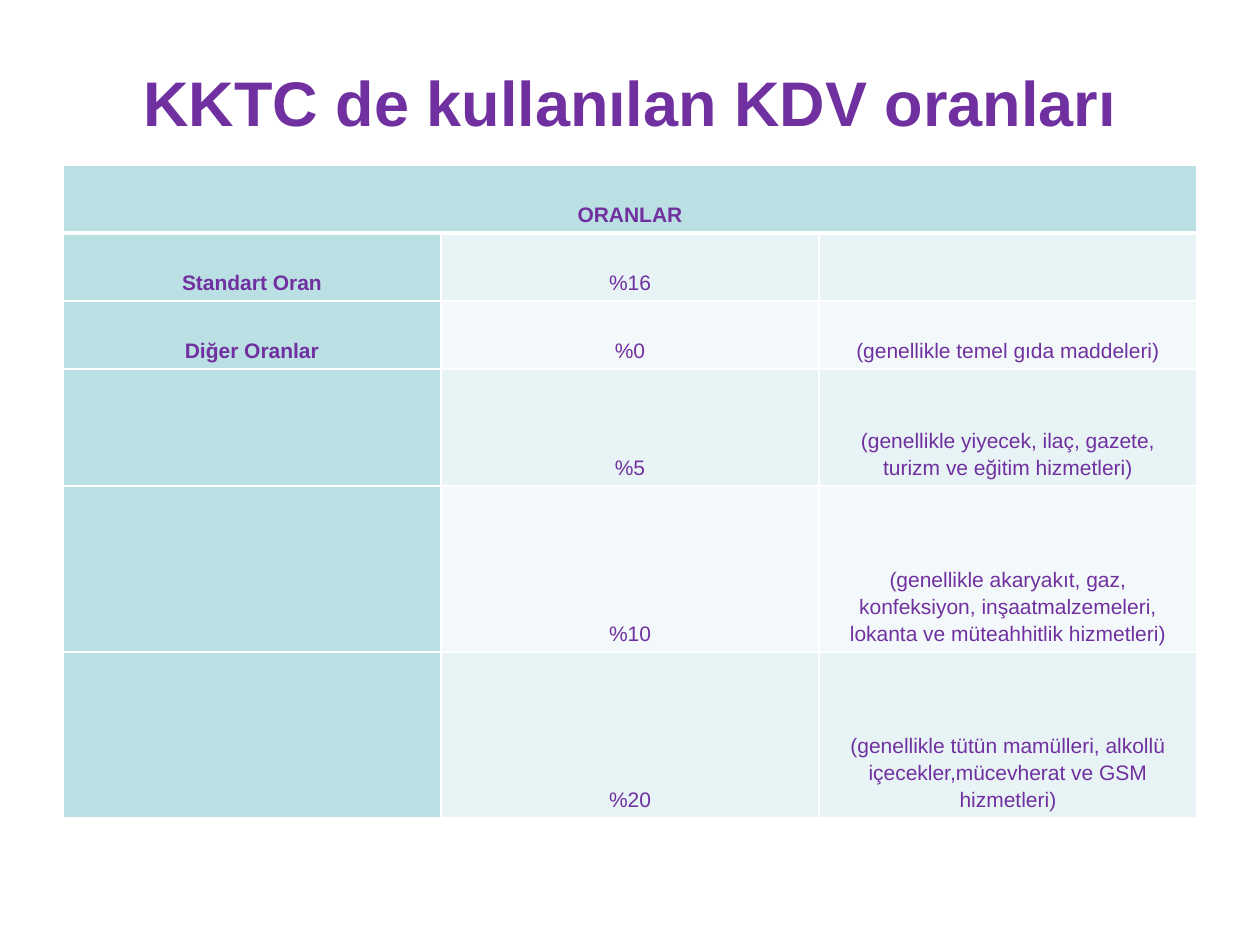
import pptx
import pptx.util
import pptx.dml.color
import pptx.enum.text
import pptx.oxml
import pptx.oxml.ns

PIXELS_PER_INCH = 126
PURPLE = pptx.dml.color.RGBColor(0x70, 0x30, 0xA0)
TEAL = pptx.dml.color.RGBColor(0xBB, 0xE0, 0xE3)
LIGHT_TEAL = pptx.dml.color.RGBColor(0xE7, 0xF3, 0xF4)
PALE_TEAL = pptx.dml.color.RGBColor(0xF3, 0xF9, 0xFA)
WHITE = pptx.dml.color.RGBColor(0xFF, 0xFF, 0xFF)

ROW_HEIGHTS = [68, 68, 68, 117, 166, 166]
RATES = [
    ["ORANLAR", "", ""],
    ["Standart Oran", "%16", ""],
    ["Diğer Oranlar", "%0", "(genellikle temel gıda maddeleri)"],
    ["", "%5", "(genellikle yiyecek, ilaç, gazete, turizm ve eğitim hizmetleri)"],
    ["", "%10", "(genellikle akaryakıt, gaz, konfeksiyon, inşaatmalzemeleri, "
                "lokanta ve müteahhitlik hizmetleri)"],
    ["", "%20", "(genellikle tütün mamülleri, alkollü içecekler,mücevherat "
                "ve GSM hizmetleri)"],
]


def px(length):
    return pptx.util.Emu(round(length * 914400 / PIXELS_PER_INCH))


def write(frame, text, size=12, bold=False, spacing=None):
    para = frame.paragraphs[0]
    para.alignment = pptx.enum.text.PP_ALIGN.CENTER
    para.line_spacing = spacing
    span = para.add_run()
    span.text = text
    span.font.name = "Arial"
    span.font.size = pptx.util.Pt(size)
    span.font.bold = bold
    span.font.color.rgb = PURPLE


def set_borders(cell, **widths):
    """Draw white borders; widths are points keyed by side: L, R, T, B."""
    properties = cell._tc.get_or_add_tcPr()
    for position, side in enumerate("LRTB"):
        width = pptx.util.Pt(widths.get(side, 1))
        properties.insert(position, pptx.oxml.parse_xml(
            f'<a:ln{side} {pptx.oxml.ns.nsdecls("a")} w="{width}"><a:solidFill>'
            f'<a:srgbClr val="{WHITE}"/></a:solidFill></a:ln{side}>'))


class SlideBuilder:
    """Holds the deck and its current slide."""

    def __init__(self):
        self.deck = pptx.Presentation()
        self.deck.slide_width = px(1260)
        self.deck.slide_height = px(945)
        self.page = self.deck.slides.add_slide(self.deck.slide_layouts[5])

    def title(self, text, left, top, width, height):
        box = self.page.shapes.title
        box.left, box.top = px(left), px(top)
        box.width, box.height = px(width), px(height)
        box.text_frame.vertical_anchor = pptx.enum.text.MSO_ANCHOR.MIDDLE
        write(box.text_frame, text, size=36, bold=True)

    def table(self, rows, heights, left, top, width):
        table = self.page.shapes.add_table(
            len(rows), len(rows[0]), px(left), px(top), px(width), px(sum(heights))).table
        for column in table.columns:
            column.width = px(width // len(rows[0]))
        for index, (texts, height) in enumerate(zip(rows, heights)):
            table.rows[index].height = px(height)
            for column, text in enumerate(texts):
                self.cell(table.cell(index, column), text, index, column)
        table.cell(0, 0).merge(table.cell(0, len(rows[0]) - 1))

    def cell(self, cell, text, row, column):
        heading = row == 0 or column == 0
        band = LIGHT_TEAL if row % 2 else PALE_TEAL
        cell.fill.solid()
        cell.fill.fore_color.rgb = TEAL if heading else band
        set_borders(cell, B=3 if row == 0 else 1, T=3 if row == 1 else 1)
        cell.vertical_anchor = pptx.enum.text.MSO_ANCHOR.BOTTOM
        cell.margin_left = cell.margin_right = px(26)
        cell.margin_top = cell.margin_bottom = px(6)
        if text:
            write(cell.text_frame, text, bold=heading, spacing=1.15)


def main():
    builder = SlideBuilder()
    builder.title("KKTC de kullanılan KDV oranları", 63, 38, 1134, 127)
    builder.table(RATES, ROW_HEIGHTS, 63, 165, 1134)
    builder.deck.save("out.pptx")


if __name__ == "__main__":
    main()
